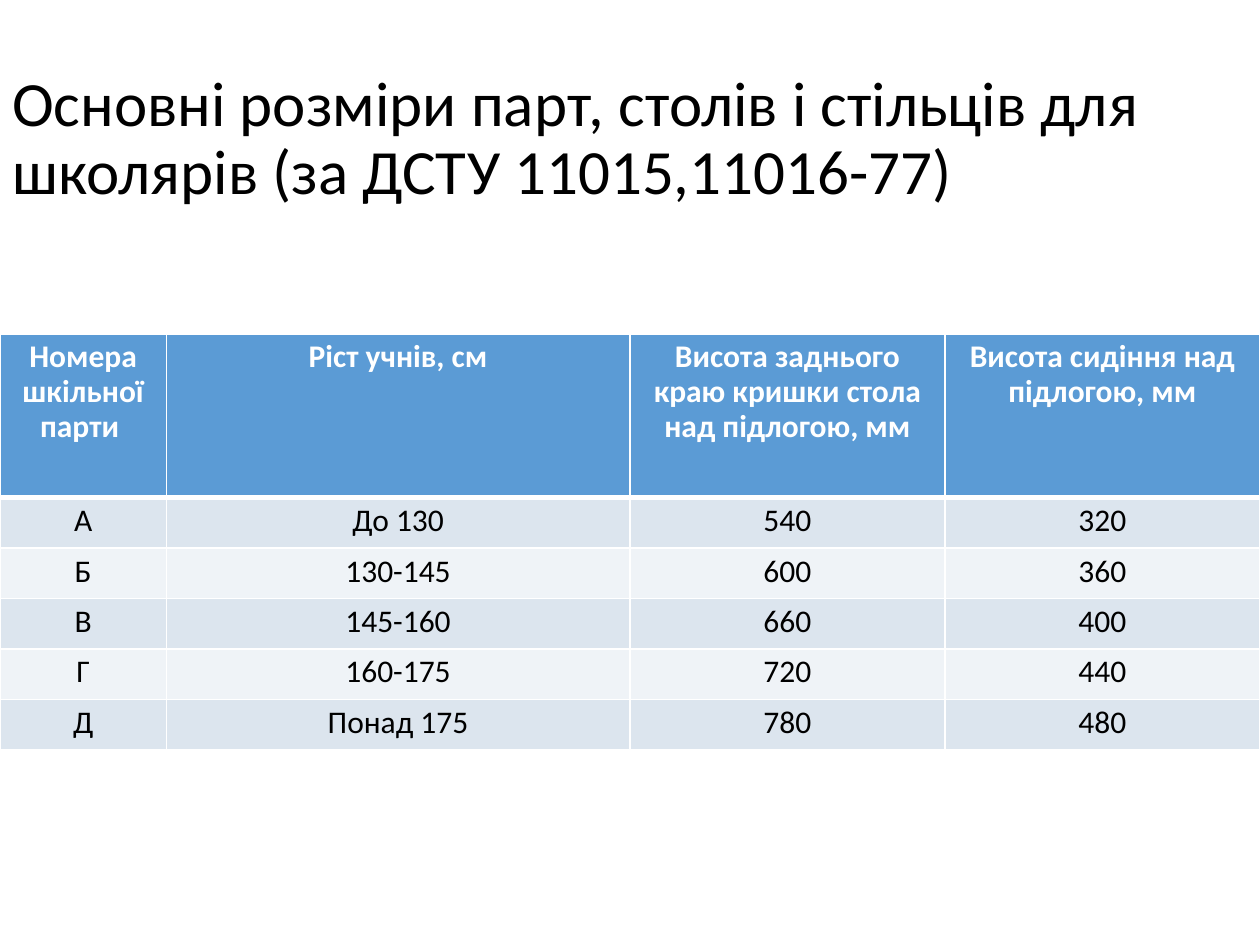
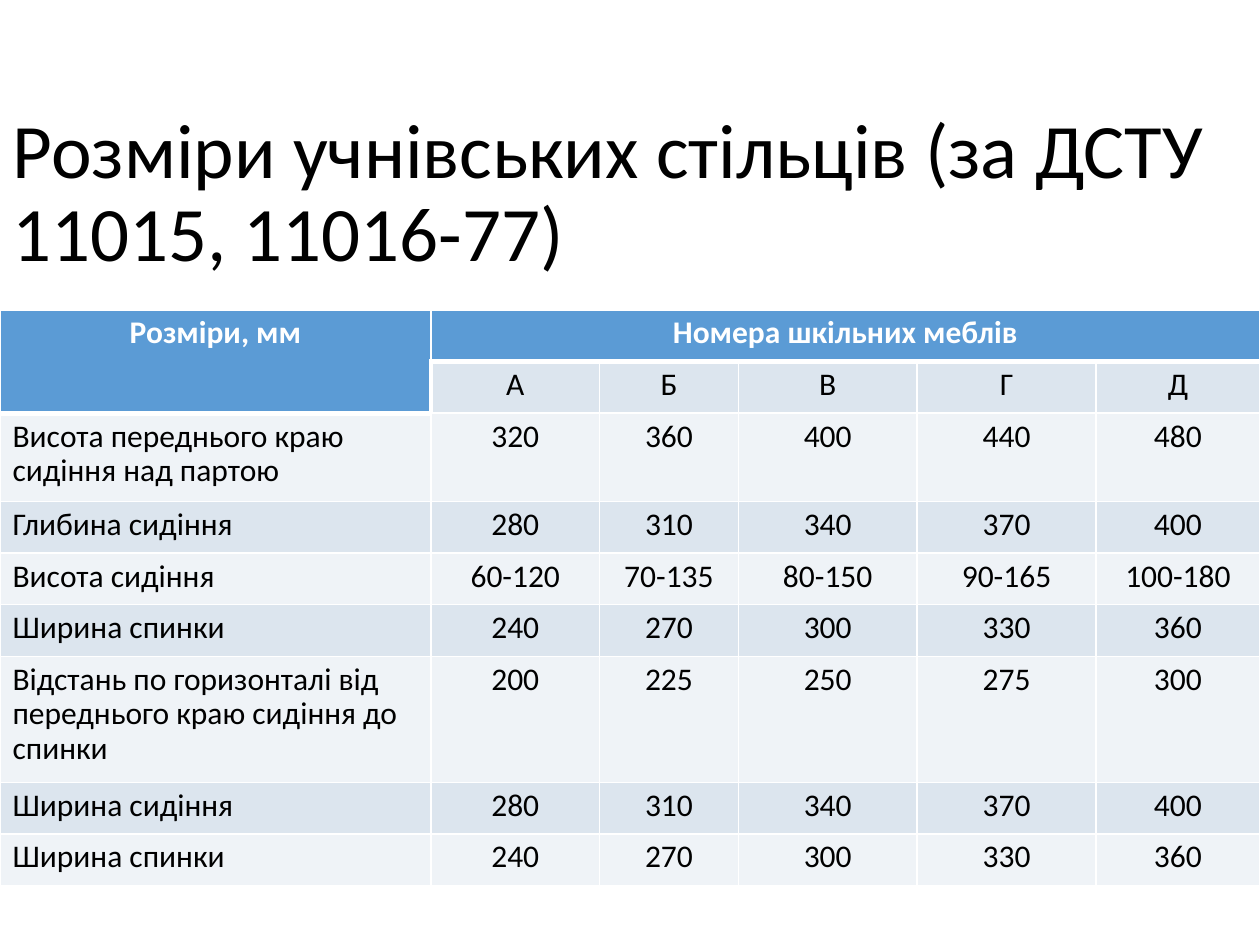
from lxml.etree import SubElement
from pptx import Presentation
from pptx.dml.color import RGBColor
from pptx.enum.text import MSO_ANCHOR, PP_ALIGN
from pptx.oxml.ns import qn
from pptx.util import Inches, Pt

WHITE, BLACK = "FFFFFF", "000000"
HEADER_FILL = "5B9BD5"
BAND_FILLS = ("EFF3F7", "DCE5EE")
THIN, THICK = 1, 3
HEADER_FORMAT = {"name": "Calibri", "size": Pt(18), "bold": True}
BODY_FORMAT = {**HEADER_FORMAT, "bold": False}

DESK_WIDTHS = (1.32, 3.68, 2.5, 2.5)
DESK_HEIGHTS = (1.3,) + (0.4,) * 5
DESK_ROWS = (
    ("Номера шкільної парти ", "Ріст учнів, см",
     "Висота заднього краю кришки стола над підлогою, мм",
     "Висота сидіння над підлогою, мм"),
    ("А", "До 130", "540", "320"),
    ("Б", "130-145", "600", "360"),
    ("В", "145-160", "660", "400"),
    ("Г", "160-175", "720", "440"),
    ("Д", "Понад 175", "780", "480"),
)

CHAIR_WIDTHS = (3.42, 1.34, 1.1, 1.42, 1.42, 1.3)
CHAIR_HEIGHTS = (0.41, 0.41, 0.7, 0.41, 0.41, 0.41, 1, 0.41, 0.41)
CHAIR_ROWS = (
    ("Розміри, мм", "Номера шкільних меблів", "", "", "", ""),
    ("", "А", "Б", "В", "Г", "Д"),
    ("Висота переднього краю сидіння над партою", "320", "360", "400", "440", "480"),
    ("Глибина сидіння", "280", "310", "340", "370", "400"),
    ("Висота сидіння", "60-120", "70-135", "80-150", "90-165", "100-180"),
    ("Ширина спинки", "240", "270", "300", "330", "360"),
    ("Відстань по горизонталі від переднього краю сидіння до спинки",
     "200", "225", "250", "275", "300"),
    ("Ширина сидіння", "280", "310", "340", "370", "400"),
    ("Ширина спинки", "240", "270", "300", "330", "360"),
)


def rgb(color):
    return RGBColor.from_string(color)


def write(frame, text, color, alignment, font_format):
    para = frame.paragraphs[0]
    para.line_spacing = 0.9
    para.alignment = alignment
    span = para.add_run()
    span.text = text
    span.font.color.rgb = rgb(color)
    for name, value in font_format.items():
        setattr(span.font, name, value)


def add_title(slide, text, top, height, size):
    box = slide.shapes.add_textbox(0, Inches(top), Inches(10), Inches(height))
    box.text_frame.word_wrap = True
    box.text_frame.vertical_anchor = MSO_ANCHOR.MIDDLE
    write(box.text_frame, text, BLACK, PP_ALIGN.LEFT,
          {"name": "Calibri", "size": Pt(size)})


def add_border(cell, side, width):
    line = SubElement(cell._tc.get_or_add_tcPr(), qn(f"a:ln{side}"), w=str(Pt(width)))
    fill = SubElement(line, qn("a:solidFill"))
    SubElement(fill, qn("a:srgbClr"), val=WHITE)


def add_borders(cell, row, column, headers):
    """Draw a thick edge wherever header and body cells meet."""
    is_header = (row, column) in headers
    neighbours = {
        "L": (row, column - 1),
        "R": (row, column + cell.span_width),
        "T": (row - 1, column),
        "B": (row + cell.span_height, column),
    }
    for side, (next_row, next_column) in neighbours.items():
        outside = next_row < 0 or next_column < 0
        # The right edge of a header is thin; the body cell beside it is thick.
        same_kind = is_header == ((next_row, next_column) in headers)
        thin = outside or same_kind or (is_header and side == "R")
        add_border(cell, side, THIN if thin else THICK)


def add_size_table(slide, rows, top, widths, heights, headers, merges=(), left_column=False):
    """Add a banded table; left_column keeps body text of column 0 at the left."""
    table = slide.shapes.add_table(
        len(rows), len(widths), 0, Inches(top),
        Inches(sum(widths)), Inches(sum(heights))).table
    for column, width in zip(table.columns, widths):
        column.width = Inches(width)
    for row, height in zip(table.rows, heights):
        row.height = Inches(height)
    for first, last in merges:
        table.cell(*first).merge(table.cell(*last))

    for r, texts in enumerate(rows):
        for c, text in enumerate(texts):
            cell = table.cell(r, c)
            is_header = (r, c) in headers
            span_free = not cell.is_spanned and not cell.is_merge_origin
            if span_free or cell.is_merge_origin:
                add_borders(cell, r, c, headers)
            cell.fill.solid()
            cell.fill.fore_color.rgb = rgb(HEADER_FILL if is_header else BAND_FILLS[r % 2])
            if text:
                at_left = left_column and c == 0 and not is_header
                write(cell.text_frame, text, WHITE if is_header else BLACK,
                      PP_ALIGN.LEFT if at_left else PP_ALIGN.CENTER,
                      HEADER_FORMAT if is_header else BODY_FORMAT)


def main():
    deck = Presentation()
    deck.slide_width, deck.slide_height = Inches(10), Inches(7.5)
    blank = deck.slide_layouts[6]

    desks = deck.slides.add_slide(blank)
    add_title(desks, "Основні розміри парт, столів і стільців для школярів "
              "(за ДСТУ 11015,11016-77)", 0.52, 1.18, 36)
    add_size_table(desks, DESK_ROWS, 2.65, DESK_WIDTHS, DESK_HEIGHTS,
                   headers={(0, c) for c in range(len(DESK_WIDTHS))})

    chairs = deck.slides.add_slide(blank)
    add_title(chairs, "Розміри учнівських стільців (за ДСТУ 11015, 11016-77)",
              0.68, 1.74, 44)
    add_size_table(chairs, CHAIR_ROWS, 2.46, CHAIR_WIDTHS, CHAIR_HEIGHTS,
                   headers={(0, c) for c in range(len(CHAIR_WIDTHS))} | {(1, 0)},
                   merges=(((0, 0), (1, 0)), ((0, 1), (0, 5))), left_column=True)

    deck.save("out.pptx")


if __name__ == "__main__":
    main()
